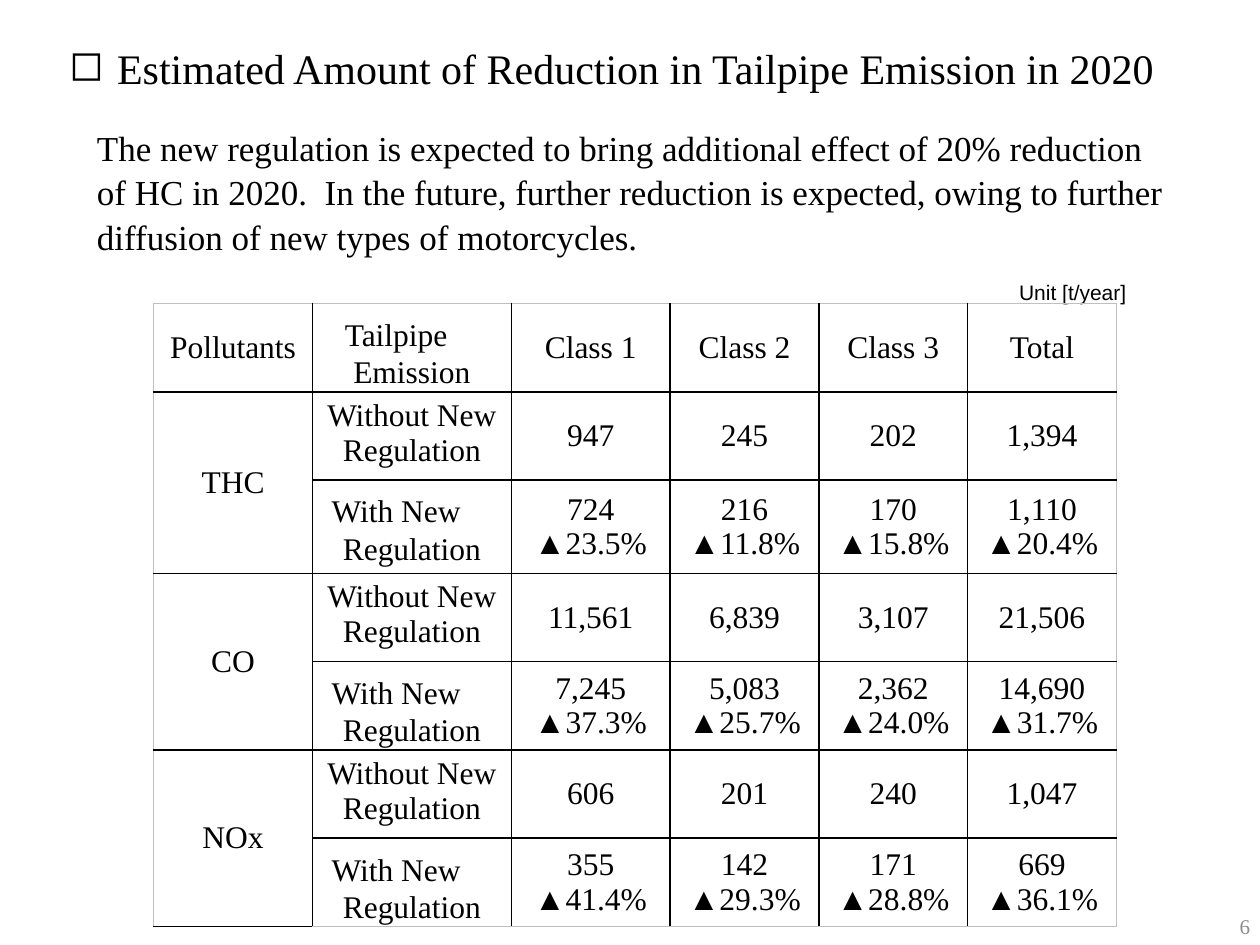
from lxml.etree import SubElement
from pptx import Presentation
from pptx.dml.color import RGBColor
from pptx.enum.text import MSO_ANCHOR, MSO_AUTO_SIZE, PP_ALIGN
from pptx.oxml import parse_xml
from pptx.oxml.ns import nsdecls, qn
from pptx.util import Pt

COLORS = {"text": "000000", "number": "8C8C8C", "inner": "000000", "outer": "BFBFBF"}
SERIF, SANS = "Times New Roman", "Arial"

TITLE = "Estimated Amount of Reduction in Tailpipe Emission in 2020"
SUMMARY = (
    "The new regulation is expected to bring additional effect of 20% reduction of HC in 2020.  "
    "In the future, further reduction is expected, owing to further diffusion of new types of motorcycles."
)
UNIT = "Unit [t/year]"
PAGE_NUMBER = "6"
HEADER = ["Pollutants", "Tailpipe　Emission", "Class 1", "Class 2", "Class 3", "Total"]
WITHOUT, WITH = "Without New\nRegulation", "With New　Regulation"
POLLUTANTS = {
    "THC": (
        ["947", "245", "202", "1,394"],
        ["724\n▲23.5%", "216\n▲11.8%", "170\n▲15.8%", "1,110\n▲20.4%"],
    ),
    "CO": (
        ["11,561", "6,839", "3,107", "21,506"],
        ["7,245\n▲37.3%", "5,083\n▲25.7%", "2,362\n▲24.0%", "14,690\n▲31.7%"],
    ),
    "NOx": (
        ["606", "201", "240", "1,047"],
        ["355\n▲41.4%", "142\n▲29.3%", "171\n▲28.8%", "669\n▲36.1%"],
    ),
}
COLUMN_WIDTHS = [90.8, 113.6, 90.8, 85, 85, 85]
ROW_HEIGHTS = [50.3, 50.3, 53.3, 50.3, 50.3, 50.3, 50.3]


def place(shape, left, top, width, height):
    shape.left, shape.top, shape.width, shape.height = map(Pt, (left, top, width, height))


def write(frame, text, size, font=SERIF, color="text", align=PP_ALIGN.LEFT, anchor=MSO_ANCHOR.TOP):
    frame.text = text
    frame.word_wrap = True
    frame.vertical_anchor = anchor
    for para in frame.paragraphs:
        para.alignment = align
        para.font.size, para.font.name = Pt(size), font
        para.font.color.rgb = RGBColor.from_string(COLORS[color])
    return frame.paragraphs[0]


def set_bullet(para, margin, indent, character=None):
    properties = para._p.get_or_add_pPr()
    properties.set("marL", str(Pt(margin)))
    properties.set("indent", str(Pt(indent)))
    tag = "a:buChar" if character else "a:buNone"
    bullet = parse_xml(f"<{tag} {nsdecls('a')}/>")
    if character:
        bullet.set("char", character)
    properties.insert_element_before(bullet, "a:tabLst", "a:defRPr", "a:extLst")


def set_borders(cell, sides):
    properties = cell._tc.get_or_add_tcPr()
    for index, (side, color) in enumerate(sides.items()):
        line = SubElement(properties, qn(f"a:ln{side}"), w=str(Pt(1)))
        fill = SubElement(line, qn("a:solidFill"))
        SubElement(fill, qn("a:srgbClr"), val=COLORS[color])
        properties.insert(index, line)


def add_emission_table(page):
    rows = [HEADER]
    for pollutant, (before, after) in POLLUTANTS.items():
        rows += [[pollutant, WITHOUT, *before], ["", WITH, *after]]
    last_row, last_column = len(rows) - 1, len(HEADER) - 1
    frame = page.shapes.add_table(
        len(rows), len(HEADER), Pt(87.8), Pt(173.5), Pt(sum(COLUMN_WIDTHS)), Pt(sum(ROW_HEIGHTS))
    )
    table = frame.table
    table.first_row = table.horz_banding = False
    for column, width in zip(table.columns, COLUMN_WIDTHS):
        column.width = Pt(width)
    for row, height in zip(table.rows, ROW_HEIGHTS):
        row.height = Pt(height)
    for r, texts in enumerate(rows):
        for c, text in enumerate(texts):
            cell = table.cell(r, c)
            write(cell.text_frame, text, 18, align=PP_ALIGN.CENTER)
            cell.vertical_anchor = MSO_ANCHOR.TOP if c == 1 else MSO_ANCHOR.MIDDLE
            cell.fill.background()
            edges = {"L": c == 0, "R": c == last_column, "T": r == 0, "B": r == last_row}
            set_borders(cell, {side: "outer" if edge else "inner" for side, edge in edges.items()})
    for r in range(1, len(rows), 2):
        table.cell(r, 0).merge(table.cell(r + 1, 0))


def main():
    """Build the emission reduction slide."""
    deck = Presentation()
    deck.slide_width, deck.slide_height = Pt(720), Pt(540)
    page = deck.slides.add_slide(deck.slide_layouts[1])

    title, body = page.shapes.title, page.placeholders[1]
    place(title, 18.7, 20.9, 686.9, 36)
    set_bullet(write(title.text_frame, TITLE, 24), 41, -27.4, "◻")

    place(body, 48.2, 67.7, 628.6, 79.9)
    para = write(body.text_frame, SUMMARY, 20)
    para.space_before, para.line_spacing = Pt(12), 1.05
    set_bullet(para, 0, 0)
    for shape in (title, body):
        shape.text_frame.auto_size = MSO_AUTO_SIZE.NONE

    unit = page.shapes.add_textbox(Pt(575.3), Pt(156.2), Pt(96.5), Pt(21.6))
    write(unit.text_frame, UNIT, 12, SANS)
    number = page.shapes.add_textbox(Pt(553.7), Pt(514.8), Pt(167.8), Pt(28.8))
    write(number.text_frame, PAGE_NUMBER, 12, color="number", align=PP_ALIGN.RIGHT, anchor=MSO_ANCHOR.MIDDLE)

    add_emission_table(page)
    deck.save("out.pptx")


if __name__ == "__main__":
    main()
